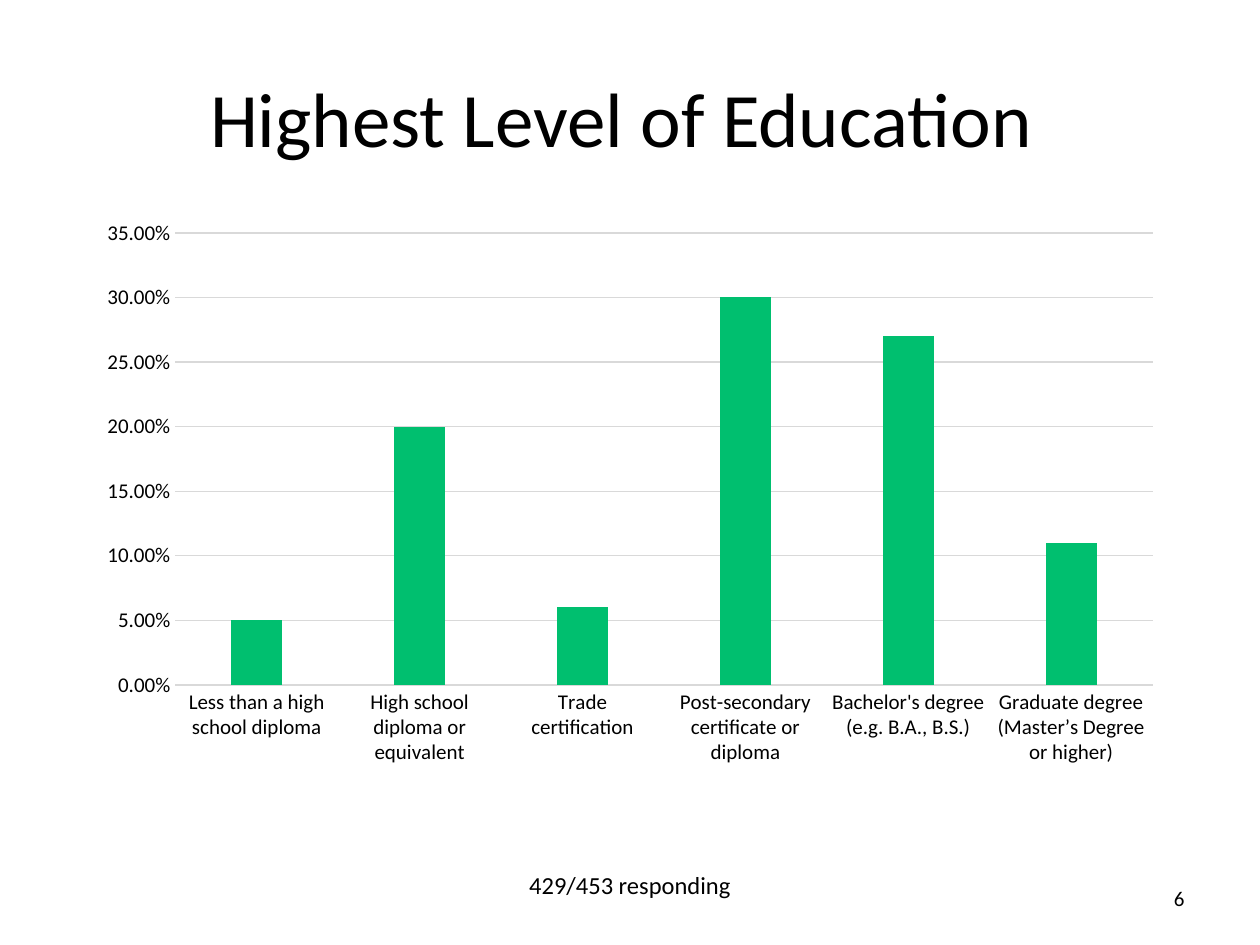
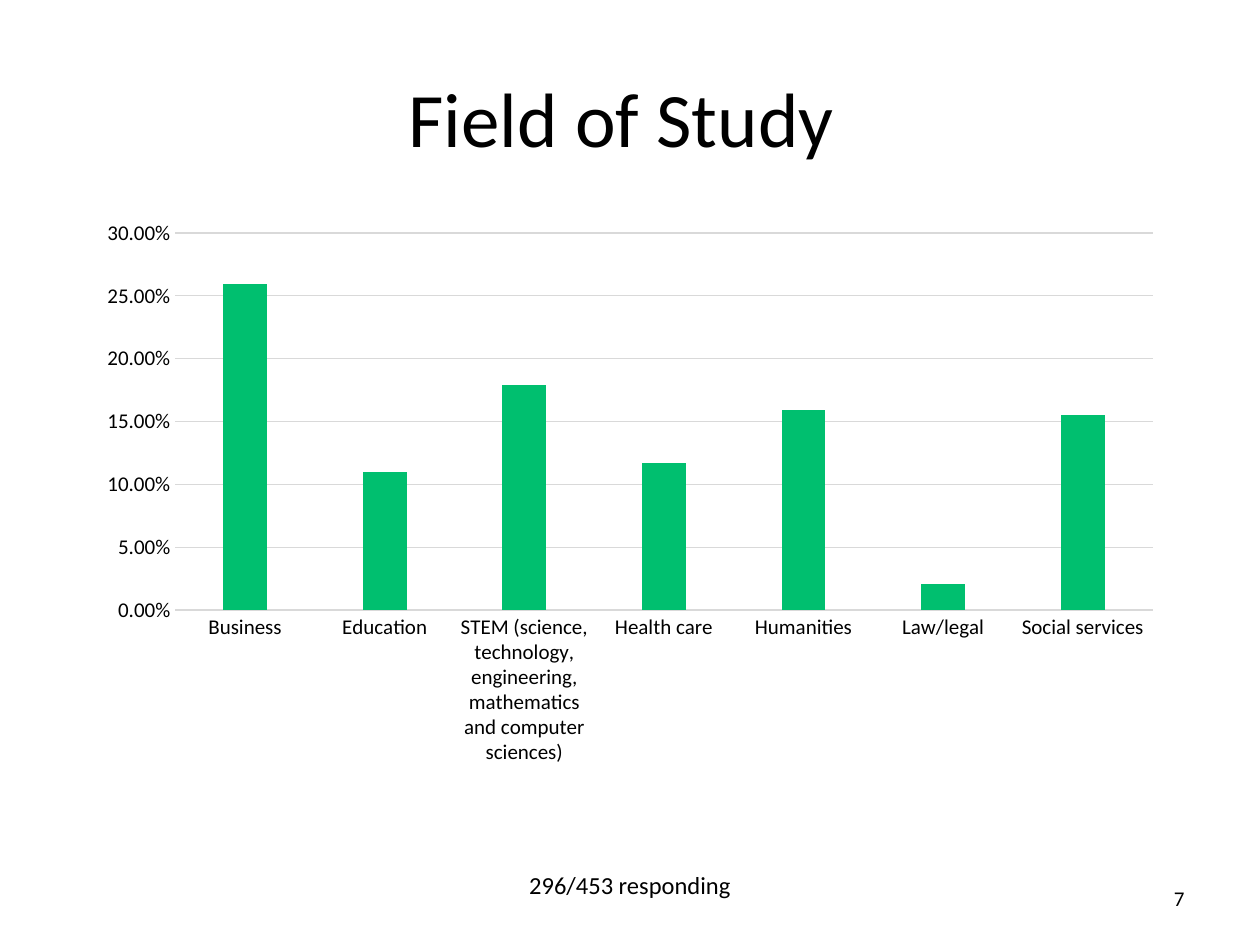
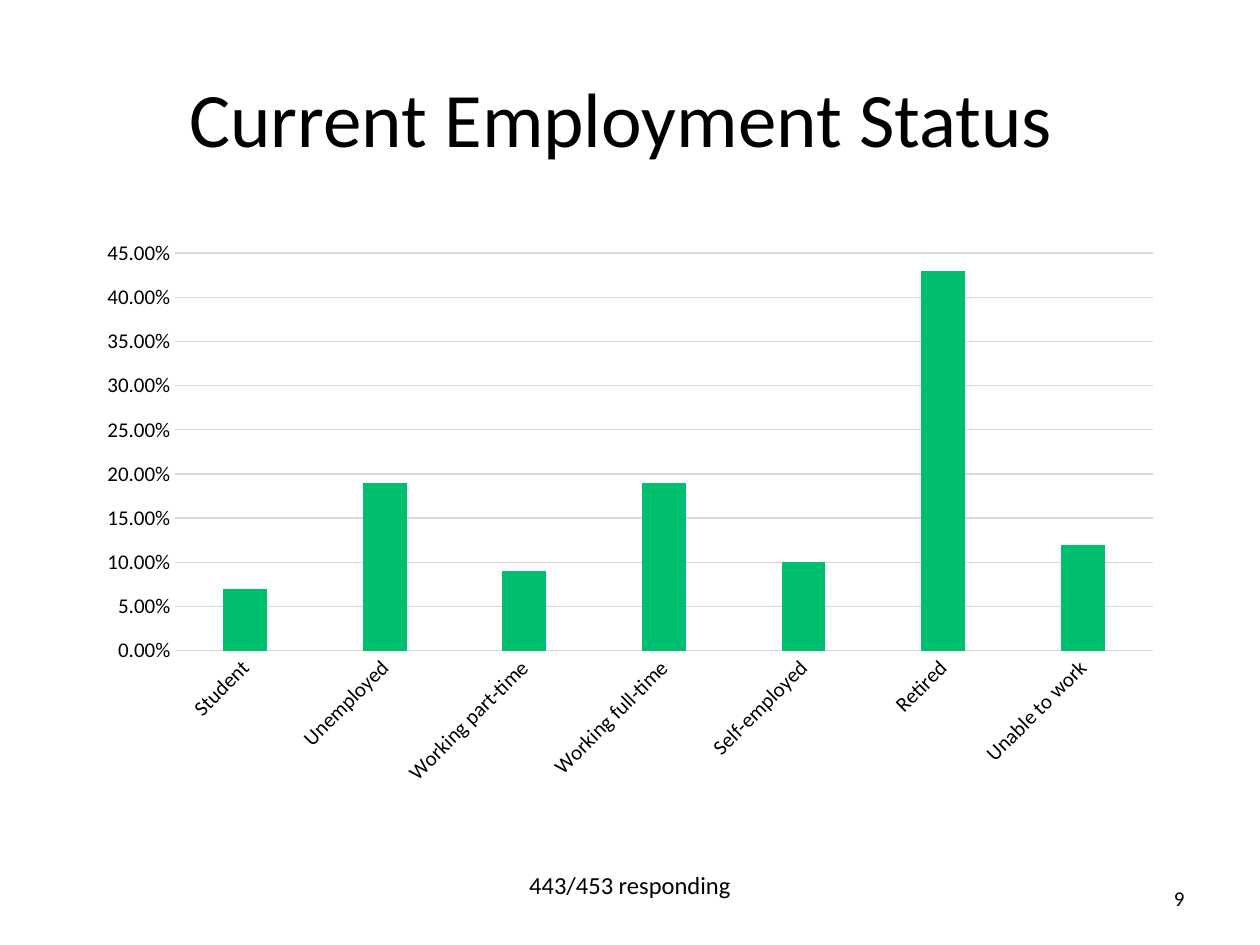
from pptx import Presentation
from pptx.chart.data import CategoryChartData
from pptx.dml.color import RGBColor
from pptx.enum.chart import XL_CHART_TYPE, XL_TICK_MARK
from pptx.enum.text import MSO_ANCHOR, MSO_AUTO_SIZE, PP_ALIGN
from pptx.util import Inches, Pt

BLACK = RGBColor(0x00, 0x00, 0x00)
GREEN = RGBColor(0x00, 0xBF, 0x6F)
GREY = RGBColor(0xD9, 0xD9, 0xD9)
FONT = "Calibri"

SURVEY = [
    {
        "title": "Highest Level of Education ",
        "answers": {
            "Less than a high school diploma": 0.05,
            "High school diploma or equivalent": 0.2,
            "Trade certification": 0.06,
            "Post-secondary certificate or diploma": 0.3,
            "Bachelor's degree (e.g. B.A., B.S.)": 0.27,
            "Graduate degree (Master’s Degree or higher)": 0.11,
        },
        "axis_max": 0.35, "top": 1.66, "rotation": 0,
        "responding": "429/453 responding", "number": "6",
    },
    {
        "title": "Field of Study ",
        "answers": {
            "Business": 0.259,
            "Education": 0.11,
            "STEM (science, technology, engineering, mathematics and computer sciences)": 0.179,
            "Health care": 0.117,
            "Humanities": 0.159,
            "Law/legal": 0.021,
            "Social services": 0.155,
        },
        "axis_max": 0.3, "top": 1.66, "rotation": 0,
        "responding": "296/453 responding", "number": "7",
    },
    {
        "title": "Current Employment Status ",
        "answers": {
            "Student": 0.07,
            "Unemployed": 0.19,
            "Working part-time": 0.09,
            "Working full-time": 0.19,
            "Self-employed": 0.1,
            "Retired": 0.43,
            "Unable to work": 0.12,
        },
        "axis_max": 0.45, "top": 1.82, "rotation": -45,
        "responding": "443/453 responding", "number": "9",
    },
]


def style_font(font, size):
    font.name = FONT
    font.size = Pt(size)
    font.color.rgb = BLACK


def write(sp, text, size, align, anchor):
    tf = sp.text_frame
    tf.vertical_anchor = anchor
    p = tf.paragraphs[0]
    p.text = text
    p.alignment = align
    style_font(p.font, size)
    return tf


prs = Presentation()
prs.slide_width = Inches(10)
prs.slide_height = Inches(7.5)

for question in SURVEY:
    s = prs.slides.add_slide(prs.slide_layouts[5])

    title = s.shapes.title
    title.left, title.top = Inches(0.5), Inches(0.3)
    title.width, title.height = Inches(9), Inches(1.25)
    write(title, question["title"], 44, PP_ALIGN.CENTER, MSO_ANCHOR.MIDDLE)

    data = CategoryChartData(number_format="0.00%")
    data.categories = question["answers"].keys()
    data.add_series("Series 1", question["answers"].values())
    chart = s.shapes.add_chart(
        XL_CHART_TYPE.COLUMN_CLUSTERED, Inches(0.68), Inches(question["top"]),
        Inches(8.64), Inches(4.5), data).chart
    chart.has_legend = False
    chart.has_title = False
    style_font(chart.font, 10)

    plot = chart.plots[0]
    plot.gap_width = 219
    plot.overlap = -27
    plot.vary_by_categories = False
    fill = plot.series[0].format.fill
    fill.solid()
    fill.fore_color.rgb = GREEN

    answers_axis, share_axis = chart.category_axis, chart.value_axis
    for axis in (answers_axis, share_axis):
        axis.major_tick_mark = XL_TICK_MARK.NONE
        axis.minor_tick_mark = XL_TICK_MARK.NONE
        style_font(axis.tick_labels.font, 12)
    share_axis.minimum_scale = 0
    share_axis.maximum_scale = question["axis_max"]
    share_axis.major_unit = 0.05
    share_axis.tick_labels.number_format = "0.00%"
    share_axis.tick_labels.number_format_is_linked = False
    share_axis.format.line.fill.background()
    for line in (answers_axis.format.line, share_axis.major_gridlines.format.line):
        line.color.rgb = GREY
        line.width = Pt(0.75)
    if question["rotation"]:
        body = answers_axis._element.txPr.bodyPr
        body.set("rot", str(question["rotation"] * 60000))
        body.set("vert", "horz")

    responding = s.shapes.add_textbox(Inches(4.09), Inches(6.86), Inches(1.82), Inches(0.34))
    tf = write(responding, question["responding"], 14, PP_ALIGN.CENTER, MSO_ANCHOR.TOP)
    tf.word_wrap = False
    tf.auto_size = MSO_AUTO_SIZE.SHAPE_TO_FIT_TEXT

    number = s.shapes.add_textbox(Inches(7.7), Inches(6.93), Inches(1.8), Inches(0.4))
    tf = write(number, question["number"], 12, PP_ALIGN.RIGHT, MSO_ANCHOR.MIDDLE)
    tf.word_wrap = True

prs.save("out.pptx")
